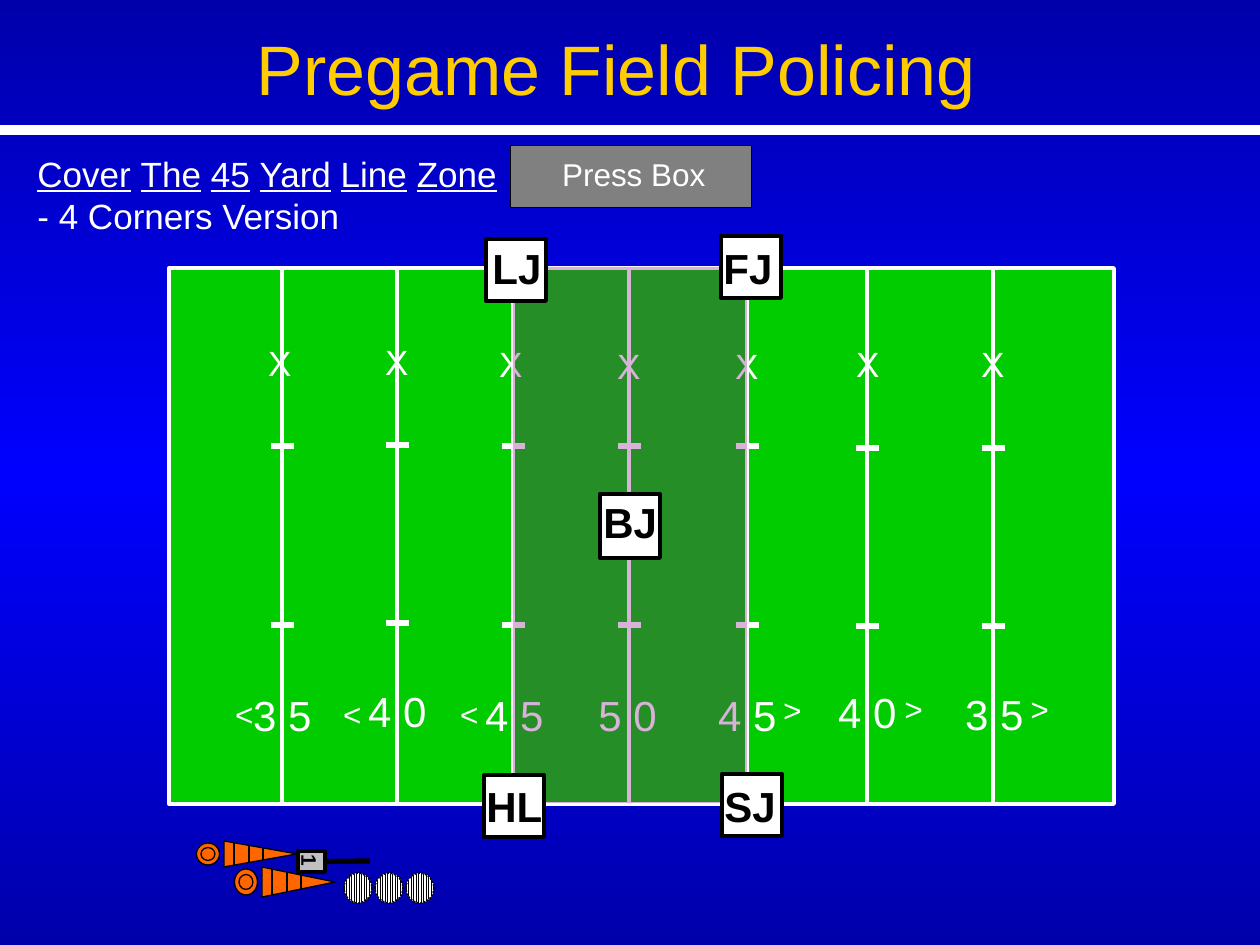
"""Build the pregame field policing slide."""
from copy import deepcopy
from dataclasses import dataclass
from typing import Any, Optional

from lxml.etree import SubElement
from pptx import Presentation
from pptx.dml.color import RGBColor as RGB
from pptx.enum.dml import MSO_LINE, MSO_PATTERN
from pptx.enum.shapes import MSO_CONNECTOR as CXN, MSO_SHAPE as SHAPE
from pptx.enum.text import MSO_AUTO_SIZE as FIT, PP_ALIGN as ALIGN
from pptx.oxml.ns import qn
from pptx.util import Pt


@dataclass(frozen=True)
class Theme:
    font: str = "Arial"
    white: str = "FFFFFF"
    black: str = "000000"
    gold: str = "FFCC00"
    navy: str = "0000AA"
    blue: str = "0000FF"
    grass: str = "00CC00"
    zone: str = "800080"
    orange: str = "FF6600"
    gray: str = "808080"
    silver: str = "C0C0C0"
    title: int = 40
    label: int = 24
    body: int = 20
    small: int = 18
    tiny: int = 12
    rule: float = 6
    bold_line: float = 3
    line: float = 2.25
    thin: float = 0.75


@dataclass(frozen=True)
class Arrow:
    x: int
    y: int
    rotation: int = 0
    text_turn: int = 0


@dataclass(frozen=True)
class Yard:
    x: int
    top: int
    label: str
    label_x: int
    label_y: int
    mark_x: int
    mark_y: int
    hashes: tuple[int, int]
    arrow: Optional[Arrow] = None


@dataclass(frozen=True)
class Official:
    name: str
    x: int
    y: int
    h: int
    text_x: int
    text_y: int
    text_w: int


@dataclass(frozen=True)
class Cone:
    x: int
    y: int
    width: int


T = Theme()
YARDS = (
    Yard(282, 266, "3 5", 228, 683, 255, 335, (446, 625), Arrow(222, 689)),
    Yard(397, 266, "4 0", 343, 679, 372, 334, (445, 623), Arrow(330, 689)),
    Yard(513, 266, "4 5", 460, 683, 486, 336, (446, 625), Arrow(447, 689)),
    Yard(629, 268, "5 0", 573, 683, 604, 338, (446, 625)),
    Yard(747, 268, "4 5", 693, 683, 722, 338, (446, 625), Arrow(771, 689, 180)),
    Yard(867, 268, "4 0", 813, 680, 843, 336, (448, 626), Arrow(892, 688, 0, 180)),
    Yard(993, 268, "3 5", 940, 682, 968, 336, (448, 626), Arrow(1018, 688, 0, 180)),
)
OFFICIALS = (
    Official("HL", 484, 775, 62, 474, 774, 84),
    Official("SJ", 722, 774, 62, 712, 774, 84),
    Official("LJ", 486, 239, 62, 480, 236, 96),
    Official("FJ", 721, 236, 62, 711, 236, 84),
    Official("BJ", 600, 494, 64, 591, 490, 83),
)


def px(n: float) -> int:
    """Turn px into EMU."""
    return round(n * 914400 / 126)


def add_box(sp: Any, kind: Any, x: float, y: float, w: float, h: float,
            fill: Optional[str], line: Optional[str] = None,
            weight: float = T.thin, rotation: int = 0) -> Any:
    """Draw a preset shape with a plain fill and outline."""
    box = sp.add_shape(kind, px(x), px(y), px(w), px(h))
    box.shadow.inherit = False
    box.rotation = rotation
    if fill:
        box.fill.solid()
        box.fill.fore_color.rgb = RGB.from_string(fill)
    else:
        box.fill.background()
    if line:
        box.line.color.rgb = RGB.from_string(line)
        box.line.width = Pt(weight)
    else:
        box.line.fill.background()
    return box


def add_line(sp: Any, x1: float, y1: float, x2: float, y2: float,
             color: str, weight: float) -> Any:
    """Draw a straight line without a shadow."""
    cx = sp.add_connector(CXN.STRAIGHT, px(x1), px(y1), px(x2), px(y2))
    cx.line.color.rgb = RGB.from_string(color)
    cx.line.width = Pt(weight)
    SubElement(cx._element.spPr, qn("a:effectLst"))
    return cx


def add_text(sp: Any, x: int, y: int, w: int, h: int,
             lines: list[list[tuple[str, bool]]], size: int,
             color: str = T.white, align: Any = ALIGN.LEFT, bold: bool = False,
             wrap: bool = False, rotation: int = 0) -> Any:
    """Write paragraphs of (text, underlined) runs."""
    tb = sp.add_textbox(px(x), px(y), px(w), px(h))
    tb.rotation = rotation
    tf = tb.text_frame
    tf.word_wrap = wrap
    tf.auto_size = FIT.SHAPE_TO_FIT_TEXT
    for i, runs in enumerate(lines):
        p = tf.add_paragraph() if i else tf.paragraphs[0]
        p.alignment = align
        for text, underlined in runs:
            r = p.add_run()
            r.text = text
            r.font.name, r.font.size = T.font, Pt(size)
            r.font.bold, r.font.underline = bold, underlined
            r.font.color.rgb = RGB.from_string(color)
    return tb


def add_yard(sp: Any, yard: Yard) -> None:
    """Draw a yard line with its hashes, number, mark and arrow."""
    add_line(sp, yard.x, yard.top, yard.x, yard.top + 536, T.white, T.line)
    for y in yard.hashes:
        add_line(sp, yard.x - 11, y, yard.x + 12, y, T.white, T.bold_line)
    add_text(sp, yard.label_x, yard.label_y, 96, 63, [[(yard.label, False)]],
             T.label, align=ALIGN.RIGHT, wrap=True)
    add_text(sp, yard.mark_x, yard.mark_y, 49, 54, [[("X", False)]],
             T.body, align=ALIGN.RIGHT)
    if yard.arrow:
        a = yard.arrow
        tb = add_text(sp, a.x, a.y, 44, 50, [[("<", False)]], T.small,
                      align=ALIGN.RIGHT, rotation=a.rotation)
        if a.text_turn:
            tb.text_frame._txBody.bodyPr.set("rot", str(a.text_turn * 60000))


def add_cone(sp: Any, cone: Cone) -> None:
    """Draw a cone lying on its side with its base rings."""
    length, w = 73, cone.width
    g = sp.add_group_shape().shapes
    add_box(g, SHAPE.ISOSCELES_TRIANGLE, cone.x + (length - w) / 2,
            cone.y - length / 2, w, length, T.orange, T.black, rotation=90)
    for d in (10, 25, 39):
        half = w / 2 * (1 - d / length)
        add_line(g, cone.x + d, cone.y - half, cone.x + d, cone.y + half, T.black, T.thin)
    for rw, rh, fill in ((23, w - 4, T.orange), (14, w / 2, None)):
        add_box(g, SHAPE.OVAL, cone.x - 16 - rw / 2, cone.y - rh / 2, rw, rh, fill, T.black)


def add_marker(sp: Any) -> None:
    """Draw the down marker and its pole."""
    g = sp.add_group_shape().shapes
    head = add_box(g, SHAPE.RECTANGLE, 298, 851, 27, 21, T.silver, T.black, T.line)
    add_text(g, 291, 842, 37, 38, [[("1", False)]], T.tiny, T.black, bold=True, rotation=90)
    pole = add_line(g, 370, 861, 325, 861, T.black, T.bold_line)
    pole.end_connect(head, 3)


def add_balls(sp: Any) -> None:
    """Draw the three striped bean bags."""
    g = sp.add_group_shape().shapes
    for i in range(3):
        ball = add_box(g, SHAPE.OVAL, 344 + 31 * i, 873, 28, 30, None, T.black, 1)
        ball.fill.patterned()
        ball.fill.pattern = MSO_PATTERN.LIGHT_VERTICAL
        ball.fill.fore_color.rgb = RGB.from_string(T.black)
        ball.fill.back_color.rgb = RGB.from_string(T.white)
        ball.line.dash_style = MSO_LINE.ROUND_DOT


def add_official(sp: Any, o: Official) -> None:
    """Draw an official's position box."""
    g = sp.add_group_shape().shapes
    add_box(g, SHAPE.RECTANGLE, o.x, o.y, 60, o.h, T.white, T.black, T.line)
    add_text(g, o.text_x, o.text_y, o.text_w, 63, [[(o.name, False)]],
             T.label, T.black, bold=True, wrap=True)


def set_background(s: Any) -> None:
    """Fill the background with a three-stop vertical gradient."""
    fill = s.background.fill
    fill.gradient()
    fill.gradient_angle = 270
    stops = fill.gradient_stops
    last = stops[1]._gs
    last.addnext(deepcopy(last))
    for stop, pos, color in zip(fill.gradient_stops, (0, 0.5, 1), (T.navy, T.blue, T.navy)):
        stop.position = pos
        stop.color.rgb = RGB.from_string(color)


def main() -> None:
    """Build and save the slide."""
    prs = Presentation()
    prs.slide_width, prs.slide_height = px(1260), px(945)
    s = prs.slides.add_slide(prs.slide_layouts[6])
    sp = s.shapes
    set_background(s)
    add_line(sp, 0, 130, 1260, 130, T.white, T.rule)
    add_text(sp, 244, 19, 775, 97, [[("Pregame Field Policing", False)]],
             T.title, T.gold, wrap=True)
    add_box(sp, SHAPE.RECTANGLE, 600, 56, 62, 241, T.gray, T.black, rotation=270)
    add_text(sp, 549, 149, 169, 50, [[("Press Box", False)]], T.small, align=ALIGN.RIGHT)
    words = "Cover The 45 Yard Line Zone".split()
    heading = [run for word in words for run in ((" ", False), (word, True))][1:]
    add_text(sp, 25, 146, 486, 202, [heading, [("- 4 Corners Version", False)]], T.body)
    add_box(sp, SHAPE.RECTANGLE, 169, 268, 945, 536, T.grass, T.white, T.line)
    for yard in YARDS:
        add_yard(sp, yard)
    add_cone(sp, Cone(262, 882, 30))
    add_marker(sp)
    add_cone(sp, Cone(224, 854, 26))
    add_balls(sp)
    zone = add_box(sp, SHAPE.RECTANGLE, 513, 267, 234, 536, T.zone)
    color = zone.fill._xPr.find(qn("a:solidFill"))[0]
    SubElement(color, qn("a:alpha"), val="30000")
    for official in OFFICIALS:
        add_official(sp, official)
    prs.save("out.pptx")


if __name__ == "__main__":
    main()
